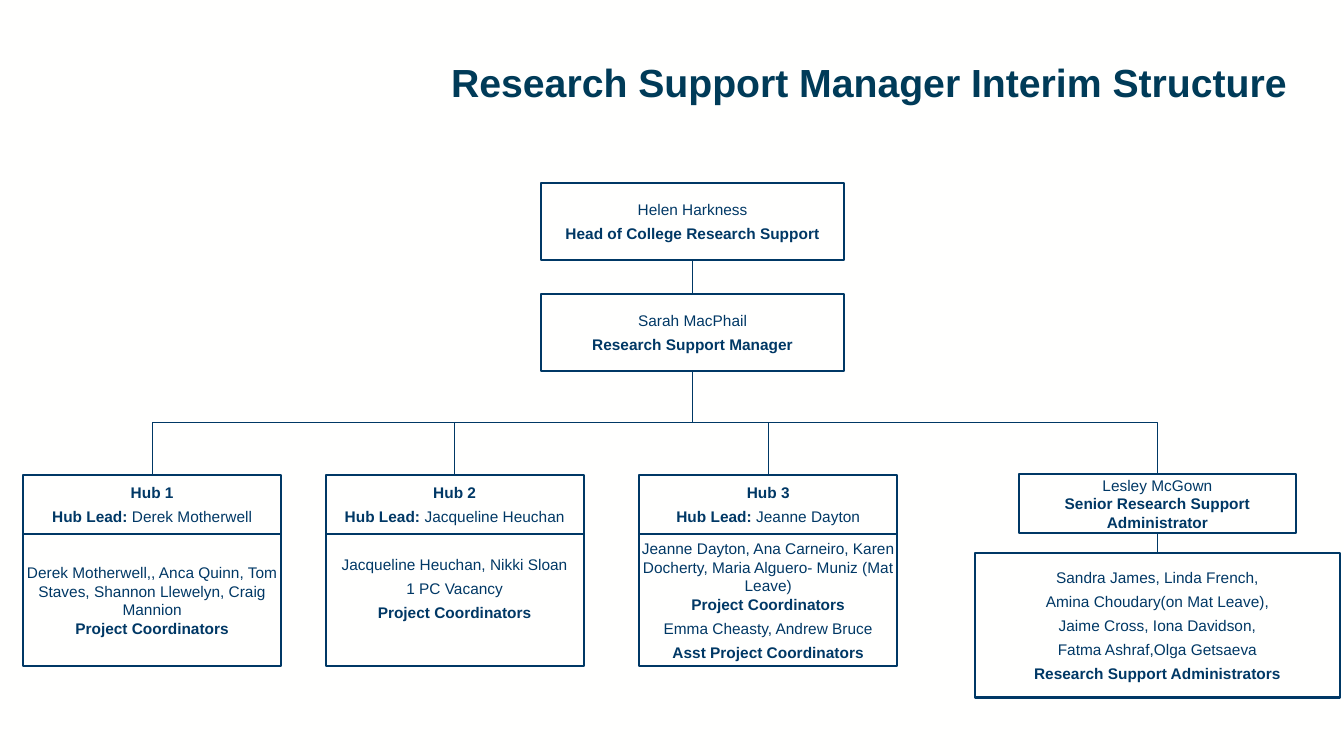
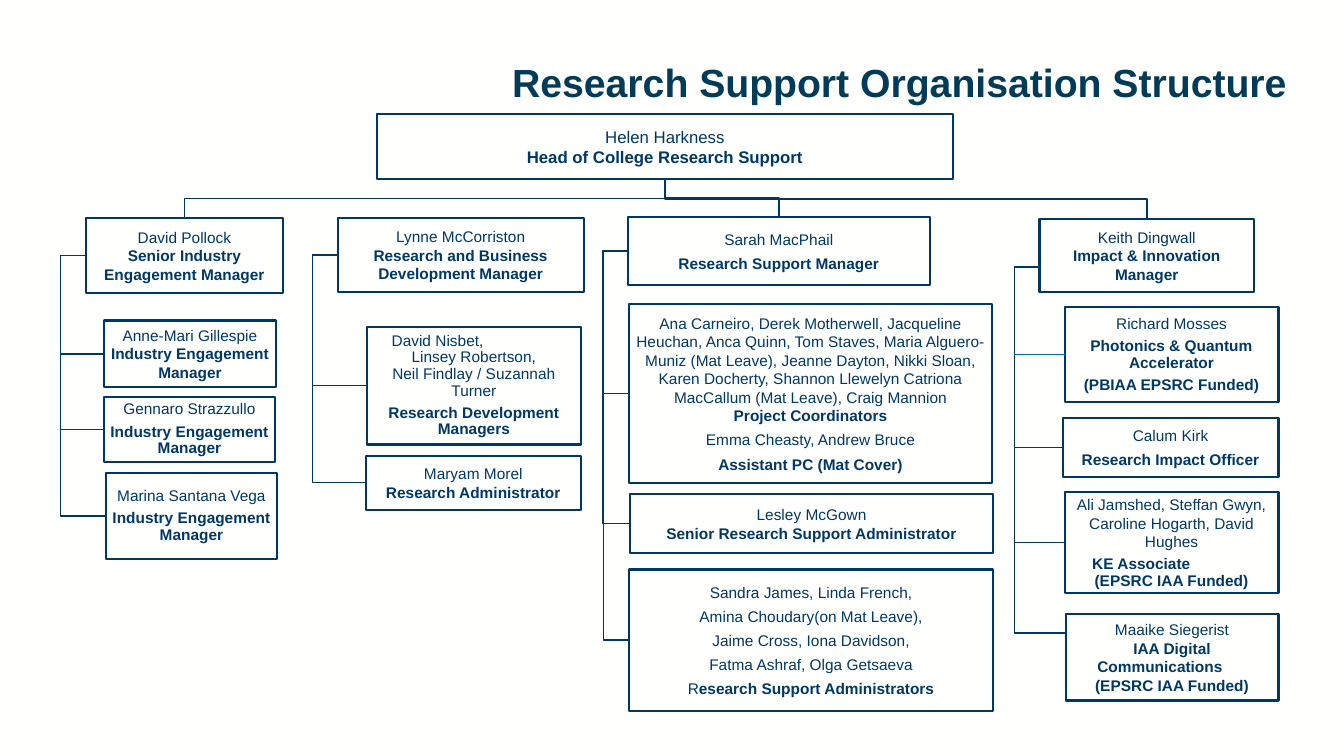
from dataclasses import dataclass

from lxml import etree
from pptx import Presentation
from pptx.dml.color import RGBColor
from pptx.enum.shapes import MSO_CONNECTOR, MSO_SHAPE
from pptx.enum.text import MSO_ANCHOR, PP_ALIGN
from pptx.oxml.ns import qn
from pptx.util import Inches, Pt

ELBOW, STRAIGHT = MSO_CONNECTOR.ELBOW, MSO_CONNECTOR.STRAIGHT
PROCESS = MSO_SHAPE.FLOWCHART_PROCESS
TOP, MIDDLE = MSO_ANCHOR.TOP, MSO_ANCHOR.MIDDLE
CENTER, RIGHT = PP_ALIGN.CENTER, PP_ALIGN.RIGHT

NAVY = RGBColor(0x00, 0x38, 0x65)
TITLE_BLUE = RGBColor(0x00, 0x3B, 0x58)
ACCENT_BLUE = RGBColor(0x00, 0x75, 0xB0)
PAPER = RGBColor(0xFF, 0xFF, 0xFE)
FONT = "Arial"

TOP_SITE, LEFT_SITE, BOTTOM_SITE = 0, 1, 2
TRUNK_GAP = Inches(0.25)


@dataclass
class Line:
    """A paragraph; text between asterisks is bold, right_indent moves it left."""
    text: str
    spacing: float = 1.0
    after: float = 4
    right_indent: float = 0


def tight(*texts):
    return [Line(text, spacing=0.9) for text in texts]


HEAD = "Helen Harkness"
HEAD_ROLE = "*Head of College Research Support*"
SUPPORT_MANAGER = ["Sarah MacPhail", "*Research Support Manager*"]
SENIOR_ADMINISTRATOR = ["Lesley McGown\n*Senior Research Support Administrator*"]
ADMINISTRATORS = [
    "Sandra James, Linda French,",
    "Amina Choudary(on Mat Leave),",
    "Jaime Cross, Iona Davidson,",
]
ENGAGEMENT_ROLE = "*Industry Engagement\nManager*"

# Boxes are (left, top, width, height, lines)
INTERIM_TITLE = "Research Support Manager Interim Structure"
INTERIM_HEAD = (5.37, 1.82, 3, 0.76, [HEAD, HEAD_ROLE])
INTERIM_MANAGER = (5.37, 2.92, 3, 0.76, SUPPORT_MANAGER)
INTERIM_SENIOR = (10.11, 4.7, 2.74, 0.59, SENIOR_ADMINISTRATOR)
INTERIM_ADMINISTRATORS = (9.67, 5.49, 3.62, 1.43, ADMINISTRATORS + [
    "Fatma Ashraf,Olga Getsaeva", "*Research Support Administrators*"])

HUB_TOP, HUB_WIDTH, HUB_HEIGHT, HUB_TEAM_HEIGHT = 4.71, 2.56, 0.59, 1.31
# Left, lead, team lines, bottom inset of the team box
HUBS = [
    (0.23, "Derek Motherwell", [
        "Derek Motherwell,, Anca Quinn, Tom Staves, Shannon Llewelyn, "
        "Craig Mannion\n*Project Coordinators*"], 0.01),
    (3.23, "Jacqueline Heuchan", [
        "Jacqueline Heuchan, Nikki Sloan", "1 PC Vacancy",
        "*Project Coordinators*"], 0.25),
    (6.34, "Jeanne Dayton", [
        "Jeanne Dayton, Ana Carneiro, Karen Docherty, Maria Alguero- Muniz "
        "(Mat Leave)\n*Project Coordinators*",
        "Emma Cheasty, Andrew Bruce", "*Asst Project Coordinators*"], 0.01),
]

ORGANISATION_TITLE = "Research Support Organisation Structure"
ORGANISATION_HEAD = (3.74, 1.13, 5.71, 0.65, [f"{HEAD}\n{HEAD_ROLE}"])

INDUSTRY_MANAGER = (0.85, 2.16, 1.96, 0.75, [
    "David Pollock\n*Senior Industry Engagement Manager*"])
INDUSTRY_TEAM = [
    (1.03, 3.18, 1.71, 0.66, [f"Anne-Mari Gillespie\n{ENGAGEMENT_ROLE}"]),
    (1.03, 3.94, 1.7, 0.64, tight("Gennaro Strazzullo", ENGAGEMENT_ROLE)),
    (1.05, 4.69, 1.7, 0.86, tight("Marina Santana Vega", ENGAGEMENT_ROLE)),
]

DEVELOPMENT_MANAGER = (3.35, 2.16, 2.44, 0.74, [
    "Lynne McCorriston\n*Research and Business Development Manager*"])
DEVELOPMENT_TEAM = [
    (3.64, 3.24, 2.12, 1.17, [
        Line("David Nisbet,", 0.9, 0, 0.72),
        *tight("Linsey Robertson,\nNeil Findlay / Suzannah Turner",
               "*Research Development Managers*")]),
    (3.63, 4.52, 2.13, 0.54, ["Maryam Morel\n*Research Administrator*"]),
]

SUPPORT_BOX = (6.23, 2.15, 2.99, 0.68, SUPPORT_MANAGER)
SUPPORT_TEAM = [
    (6.24, 3.02, 3.6, 1.77, [
        "Ana Carneiro, Derek Motherwell, Jacqueline Heuchan, Anca Quinn, "
        "Tom Staves, Maria Alguero- Muniz (Mat Leave), Jeanne Dayton, "
        "Nikki Sloan, Karen Docherty, Shannon Llewelyn Catriona MacCallum "
        "(Mat Leave), Craig Mannion\n*Project Coordinators*",
        "Emma Cheasty, Andrew Bruce", "*Assistant PC (Mat Cover)*"]),
    (6.25, 4.9, 3.6, 0.59, SENIOR_ADMINISTRATOR),
    (6.24, 5.65, 3.61, 1.4, ADMINISTRATORS + [
        "Fatma Ashraf, Olga Getsaeva", "R*esearch Support Administrators*"]),
]

IMPACT_MANAGER = (10.31, 2.17, 2.13, 0.73, [
    "Keith Dingwall\n*Impact & Innovation Manager*"])
IMPACT_LEAVE_Y = 2.65
PHOTONICS = (10.56, 3.05, 2.12, 0.94, tight(
    "Richard Mosses", "*Photonics & Quantum Accelerator*",
    "*(PBIAA EPSRC Funded)*"))
IMPACT_TEAM = [
    (10.54, 4.15, 2.14, 0.58, ["Calum Kirk", "*Research Impact Officer*"]),
    (10.56, 4.88, 2.12, 1, [
        "Ali Jamshed, Steffan Gwyn, Caroline Hogarth, David Hughes",
        Line("*KE Associate*", 0.9, 0, 0.6),
        Line("*(EPSRC IAA Funded)*", 0.9)]),
]
COMMUNICATIONS = (10.57, 6.09, 2.11, 0.86, [
    Line("Maaike Siegerist\n*IAA Digital*", after=0),
    Line("*Communications*", after=0, right_indent=0.24),
    Line("*(EPSRC IAA Funded)*", after=0)])
COMMUNICATIONS_ARRIVE_Y = 6.28


def style_font(font, size, color):
    font.name, font.size, font.color.rgb = FONT, Pt(size), color


def add_titled_slide(presentation, title_text):
    slide = presentation.slides.add_slide(presentation.slide_layouts[5])
    title = slide.shapes.title
    title.left, title.top = Inches(2.79), Inches(0.58)
    title.width, title.height = Inches(10.07), Inches(0.97)
    title.text_frame.text = title_text
    title.text_frame.vertical_anchor = TOP
    paragraph = title.text_frame.paragraphs[0]
    paragraph.alignment, paragraph.line_spacing = RIGHT, 0.9
    style_font(paragraph.font, 28, TITLE_BLUE)
    paragraph.font.bold = True
    return slide


def write_line(paragraph, line, size):
    paragraph.alignment = CENTER
    paragraph.line_spacing = line.spacing
    paragraph.space_after = Pt(line.after)
    # Stated even when zero, so that no indent carries over from the line above
    paragraph._p.get_or_add_pPr().set("marR", str(Inches(line.right_indent)))
    style_font(paragraph.font, size, NAVY)
    for part_number, part in enumerate(line.text.split("*")):
        for row_number, row in enumerate(part.split("\n")):
            if row_number:
                paragraph.add_line_break()
            if row:
                run = paragraph.add_run()
                run.text = row
                run.font.bold = part_number % 2 == 1


def add_box(slide, box, size=11, bottom_inset=0.01):
    *place, lines = box
    shape = slide.shapes.add_shape(PROCESS, *map(Inches, place))
    shape.shadow.inherit = False
    shape.fill.solid()
    shape.fill.fore_color.rgb = PAPER
    shape.line.color.rgb = NAVY
    shape.line.width = Pt(1.5)
    frame = shape.text_frame
    frame.word_wrap = True
    frame.vertical_anchor = MIDDLE
    frame.margin_left = frame.margin_right = frame.margin_top = Inches(0.01)
    frame.margin_bottom = Inches(bottom_inset)
    for number, line in enumerate(lines):
        paragraph = frame.add_paragraph() if number else frame.paragraphs[0]
        write_line(paragraph, line if isinstance(line, Line) else Line(line), size)
    return shape


def add_line(slide, kind, start, end, color=NAVY, width=1):
    connector = slide.shapes.add_connector(kind, *start, *end)
    connector.line.color.rgb = color
    connector.line.width = Pt(width)
    etree.SubElement(connector._element.spPr, qn("a:effectLst"))
    return connector


def center_x(shape):
    return shape.left + shape.width // 2


def center_y(shape):
    return shape.top + shape.height // 2


def link_down(slide, upper, lower):
    """Join bottom to top, turning halfway when the centres differ."""
    start = center_x(upper), upper.top + upper.height
    end = center_x(lower), lower.top
    across, down = end[0] - start[0], end[1] - start[1]
    connector = add_line(slide, ELBOW if across else STRAIGHT, start, end)
    connector.begin_connect(upper, BOTTOM_SITE)
    connector.end_connect(lower, TOP_SITE)
    if across:
        # A vertical elbow is a horizontal one turned about its centre
        connector.left = (start[0] + end[0] - down) // 2
        connector.top = (start[1] + end[1] - abs(across)) // 2
        connector.width, connector.height = down, abs(across)
        transform = connector._element.spPr.find(qn("a:xfrm"))
        transform.attrib.pop("flipH", None)
        transform.set("rot", str((270 if across > 0 else 90) * 60000))
        if across > 0:
            transform.set("flipH", "1")


def link_side(slide, manager, member, leave_y=None, arrive_y=None):
    """Join left edges along a trunk; a given height replaces the middle."""
    start = manager.left, leave_y or center_y(manager)
    end = member.left, arrive_y or center_y(member)
    connector = add_line(slide, ELBOW, start, end)
    if leave_y is None:
        connector.begin_connect(manager, LEFT_SITE)
    if arrive_y is None:
        connector.end_connect(member, LEFT_SITE)
    bend = round(-TRUNK_GAP / (end[0] - start[0]) * 100000)
    adjustments = connector._element.spPr.find(qn("a:prstGeom")).find(qn("a:avLst"))
    etree.SubElement(adjustments, qn("a:gd"), name="adj1", fmla=f"val {bend}")


def build_interim_slide(presentation):
    slide = add_titled_slide(presentation, INTERIM_TITLE)
    head, manager, senior, administrators = [add_box(slide, box) for box in (
        INTERIM_HEAD, INTERIM_MANAGER, INTERIM_SENIOR, INTERIM_ADMINISTRATORS)]
    link_down(slide, head, manager)
    link_down(slide, manager, senior)
    link_down(slide, senior, administrators)
    for number, (left, lead, team, bottom_inset) in enumerate(HUBS, 1):
        add_box(slide, (left, HUB_TOP + HUB_HEIGHT, HUB_WIDTH, HUB_TEAM_HEIGHT, team),
                bottom_inset=bottom_inset)
        hub = add_box(slide, (left, HUB_TOP, HUB_WIDTH, HUB_HEIGHT, [
            f"*Hub {number}*", f"*Hub Lead: *{lead}"]))
        link_down(slide, manager, hub)


def build_organisation_slide(presentation):
    slide = add_titled_slide(presentation, ORGANISATION_TITLE)
    head = add_box(slide, ORGANISATION_HEAD, size=12)
    industry, development, support, impact = [add_box(slide, box) for box in (
        INDUSTRY_MANAGER, DEVELOPMENT_MANAGER, SUPPORT_BOX, IMPACT_MANAGER)]
    for manager in (industry, support, impact):
        link_down(slide, head, manager)
    leave_y = Inches(IMPACT_LEAVE_Y)
    for manager, team, height in (
            (industry, INDUSTRY_TEAM, None), (development, DEVELOPMENT_TEAM, None),
            (support, SUPPORT_TEAM, None), (impact, IMPACT_TEAM, leave_y)):
        for box in team:
            link_side(slide, manager, add_box(slide, box), height)
    communications = add_box(slide, COMMUNICATIONS)
    link_side(slide, impact, communications, leave_y, Inches(COMMUNICATIONS_ARRIVE_Y))
    photonics = add_box(slide, PHOTONICS)
    middle = center_y(photonics)
    add_line(slide, STRAIGHT, (photonics.left, middle),
             (impact.left - TRUNK_GAP, middle), ACCENT_BLUE, 0.5)


def main():
    presentation = Presentation()
    presentation.slide_width, presentation.slide_height = Inches(13.33), Inches(7.5)
    background = presentation.slide_master.background.fill
    background.solid()
    background.fore_color.rgb = PAPER
    build_interim_slide(presentation)
    build_organisation_slide(presentation)
    presentation.save("out.pptx")


if __name__ == "__main__":
    main()
